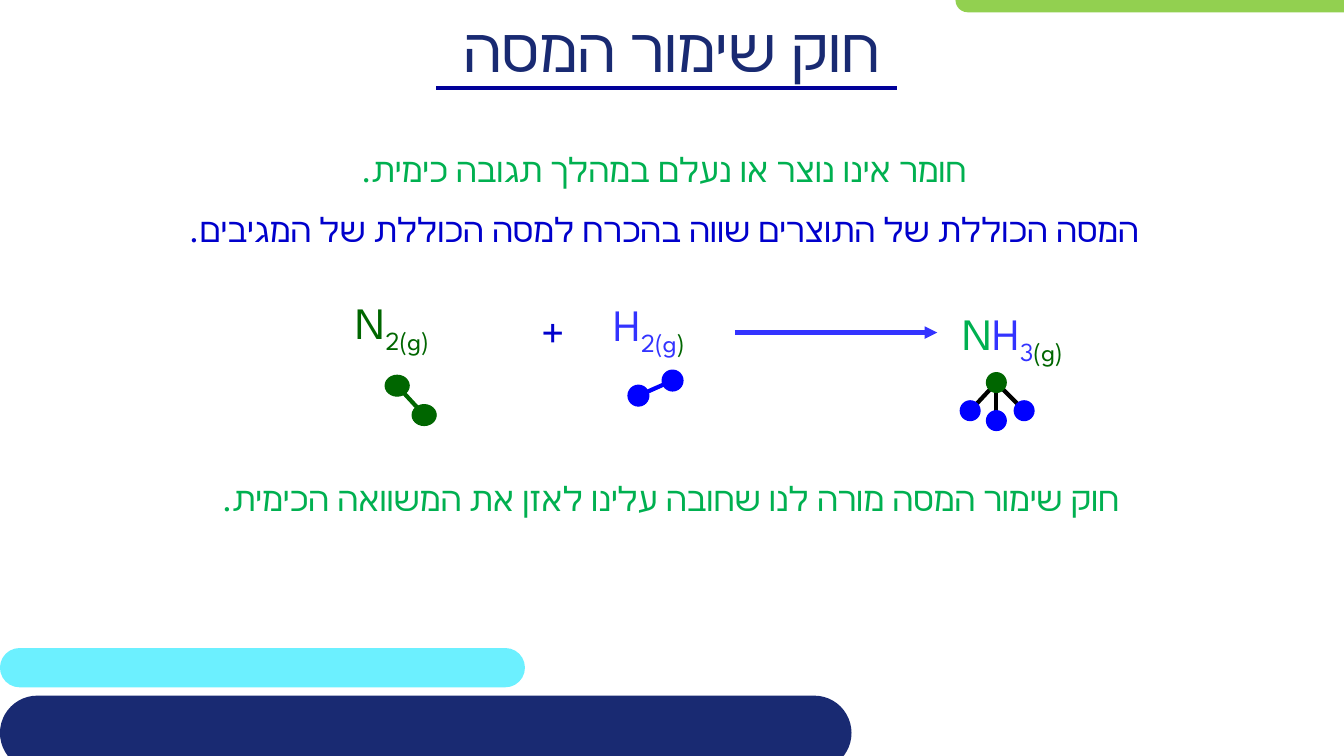
from lxml import etree
from pptx import Presentation
from pptx.dml.color import RGBColor
from pptx.enum.shapes import MSO_CONNECTOR, MSO_SHAPE
from pptx.enum.text import MSO_ANCHOR, PP_ALIGN
from pptx.oxml.ns import qn
from pptx.util import Cm, Pt

STRAIGHT = MSO_CONNECTOR.STRAIGHT
OVAL = MSO_SHAPE.OVAL
ROUNDED = MSO_SHAPE.ROUNDED_RECTANGLE
CENTER = PP_ALIGN.CENTER
LEFT = PP_ALIGN.LEFT
MIDDLE = MSO_ANCHOR.MIDDLE
TOP = MSO_ANCHOR.TOP

NAVY = "192A72"
GREEN = "00B050"
DARK_GREEN = "006600"
BLUE = "0000FF"
TEXT_BLUE = "0000CC"
VIOLET = "3333FF"


def color(value):
    return RGBColor.from_string(value)


class LessonPage:
    """Draw lesson elements on one slide, with lengths in centimetres."""

    font_name = "League Spartan"
    line_width = 3

    def __init__(self, page):
        self.page = page

    def shape(self, kind, left, top, width, height, fill, outlined=False):
        shape = self.page.shapes.add_shape(kind, Cm(left), Cm(top), Cm(width), Cm(height))
        shape.shadow.inherit = False
        shape.fill.solid()
        shape.fill.fore_color.rgb = color(fill)
        if outlined:
            shape.line.color.rgb = color(fill)
            shape.line.width = Pt(0.75)
        else:
            shape.line.fill.background()
        return shape

    def bar(self, left, top, width, height, fill):
        self.shape(ROUNDED, left, top, width, height, fill).adjustments[0] = 0.5

    def line(self, start, end, stroke, arrow=False):
        points = [Cm(value) for value in (*start, *end)]
        line = self.page.shapes.add_connector(STRAIGHT, *points)
        line.line.color.rgb = color(stroke)
        line.line.width = Pt(self.line_width)
        if arrow:
            outline = line.line._get_or_add_ln()
            etree.SubElement(outline, qn("a:tailEnd"), type="triangle")
        etree.SubElement(line._element.spPr, qn("a:effectLst"))

    def text_box(self, left, top, width, height, anchor=TOP):
        box = self.page.shapes.add_textbox(Cm(left), Cm(top), Cm(width), Cm(height))
        box.text_frame.word_wrap = True
        box.text_frame.vertical_anchor = anchor
        return box.text_frame

    def style_span(self, span, size, fill):
        span.font.size = Pt(size)
        span.font.name = self.font_name
        span.font.color.rgb = color(fill)
        complex_font = etree.SubElement(span.font._element, qn("a:cs"))
        complex_font.set("typeface", self.font_name)

    def hebrew(self, left, top, width, height, lines, size=24, spacing=1.0, anchor=TOP):
        frame = self.text_box(left, top, width, height, anchor)
        frame.text = "\n".join(text for text, fill in lines)
        for para, (text, fill) in zip(frame.paragraphs, lines):
            para.alignment = CENTER
            para.line_spacing = spacing
            para._p.get_or_add_pPr().set("rtl", "1")
            self.style_span(para.runs[0], size, fill)

    def formula(self, left, top, width, parts):
        para = self.text_box(left, top, width, 1.63).paragraphs[0]
        para.alignment = LEFT
        for text, fill, lowered in parts:
            span = para.add_run()
            span.text = text
            self.style_span(span, 32, fill)
            if lowered:
                span.font._element.set("baseline", "-25000")

    def molecule(self, atoms, bond_color, width=0.53, outlined=True):
        center = atoms[0][:2]
        for x, y, fill in atoms[1:]:
            self.line(center, (x, y), bond_color)
        for x, y, fill in atoms:
            self.shape(OVAL, x - width / 2, y - 0.265, width, 0.53, fill, outlined)


def main():
    deck = Presentation()
    deck.slide_width, deck.slide_height = Cm(33.87), Cm(19.05)
    lesson = LessonPage(deck.slides.add_slide(deck.slide_layouts[6]))

    lesson.bar(0, 16.33, 13.23, 0.99, "6CF0FF")
    lesson.bar(24.08, -0.3, 14.73, 0.61, "92D050")
    lesson.bar(0, 17.53, 21.46, 1.88, NAVY)

    lesson.hebrew(0, 0.2, 33.87, 2.01, [("חוק שימור המסה", NAVY)], size=44, anchor=MIDDLE)
    lesson.line((11, 2.21), (22.61, 2.21), "000099")
    law = [
        ("חומר אינו נוצר או נעלם במהלך תגובה כימית.", GREEN),
        ("המסה הכוללת של התוצרים שווה בהכרח למסה הכוללת של המגיבים.", TEXT_BLUE),
    ]
    lesson.hebrew(0.86, 3.12, 31.75, 3.33, law, spacing=1.5)
    conclusion = "חוק שימור המסה מורה לנו שחובה עלינו לאזן את המשוואה הכימית."
    lesson.hebrew(1.45, 11.91, 30.91, 2.06, [(conclusion, GREEN)])

    lesson.formula(8.71, 7.29, 3.35, [("N", DARK_GREEN, False), ("2(g)", DARK_GREEN, True)])
    lesson.formula(13.39, 7.54, 1.19, [("+", TEXT_BLUE, False)])
    hydrogen = [("H", VIOLET, False), ("2(g", VIOLET, True), (")", DARK_GREEN, True)]
    lesson.formula(15.21, 7.34, 3.15, hydrogen)
    lesson.line((18.52, 8.38), (23.62, 8.38), VIOLET, arrow=True)
    ammonia = [("N", GREEN, False), ("H", VIOLET, False), ("3", VIOLET, True), ("(g)", DARK_GREEN, True)]
    lesson.formula(24, 7.57, 4.14, ammonia)

    lesson.molecule([(10.01, 9.72, DARK_GREEN), (10.69, 10.46, DARK_GREEN)], DARK_GREEN, width=0.61)
    lesson.molecule([(16.95, 9.59, BLUE), (16.09, 9.97, BLUE)], BLUE)
    ammonia_atoms = [
        (25.11, 9.64, DARK_GREEN),
        (24.45, 10.35, BLUE),
        (25.81, 10.35, BLUE),
        (25.11, 10.6, BLUE),
    ]
    lesson.molecule(ammonia_atoms, "000000", outlined=False)

    deck.save("out.pptx")


if __name__ == "__main__":
    main()
